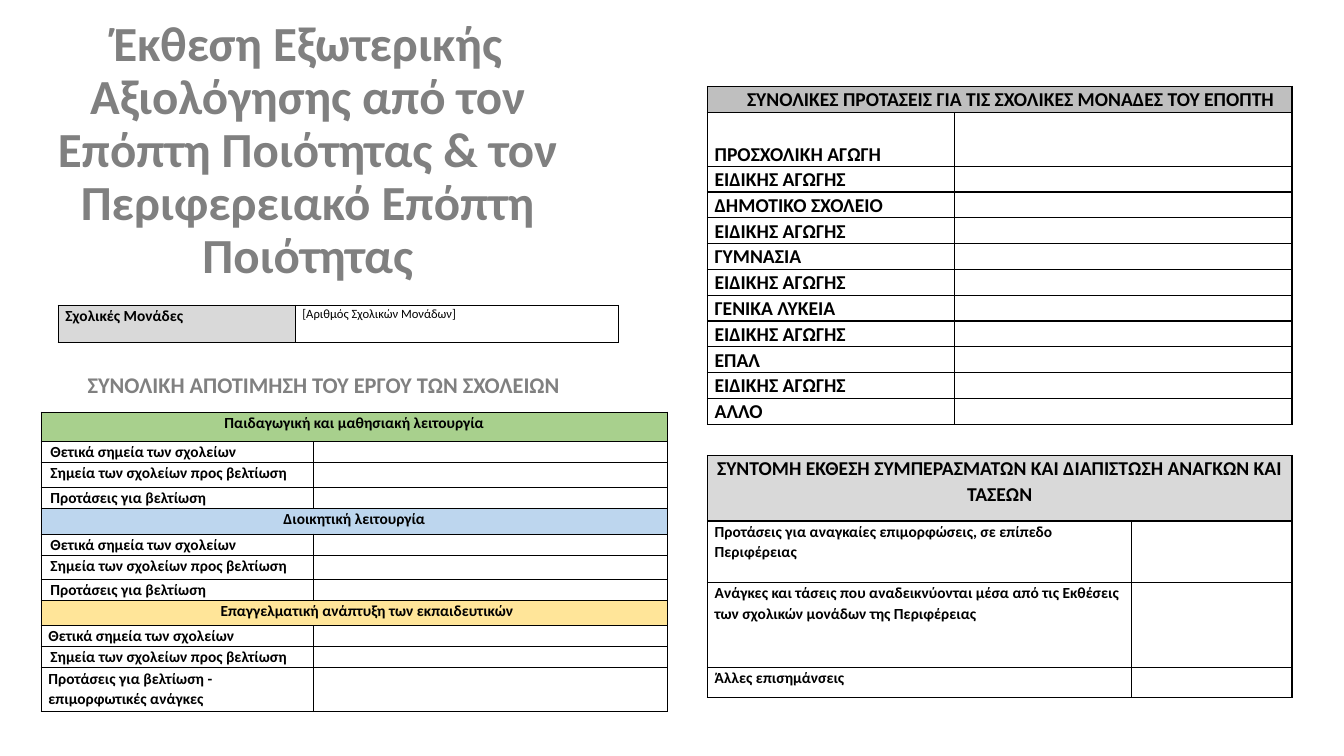
import pptx
import pptx.util
import pptx.dml.color
import pptx.enum.text
import pptx.oxml
import lxml.etree
from dataclasses import dataclass
from pptx.util import Cm


@dataclass(frozen=True)
class Theme:
    font: str = "Calibri"
    ink: str = "000000"
    heading: str = "808080"
    white: str = "FFFFFF"
    pale: str = "D9D9D9"
    grey: str = "BFBFBF"
    green: str = "A8D08D"
    blue: str = "BDD6EE"
    yellow: str = "FFE599"
    title: float = 35
    subtitle: float = 16
    large: float = 14
    body: float = 11
    small: float = 9


theme = Theme()
CENTER = pptx.enum.text.PP_ALIGN.CENTER
MIDDLE = pptx.enum.text.MSO_ANCHOR.MIDDLE
BOTTOM = pptx.enum.text.MSO_ANCHOR.BOTTOM
DRAWING = "http://schemas.openxmlformats.org/drawingml/2006/main"


def write(para, text, size, color=theme.ink, bold=True, spacing=1.07):
    para.text = text
    para.line_spacing = spacing
    para.font.name = theme.font
    para.font.size = pptx.util.Pt(size)
    para.font.bold = bold
    para.font.color.rgb = pptx.dml.color.RGBColor.from_string(color)


def add_grid(page, left, top, widths, rows):
    frame = page.shapes.add_table(len(rows), len(widths), Cm(left), Cm(top),
                                  Cm(sum(widths)), Cm(sum(row[0] for row in rows)))
    table = frame.table
    table.first_row = table.horz_banding = False
    for column, width in zip(table.columns, widths):
        column.width = Cm(width)
    for index, (height, label, size, fill, indent) in enumerate(rows):
        table.rows[index].height = Cm(height)
        for cell in table.rows[index].cells:
            cell.margin_left = cell.margin_right = Cm(0.18)
            cell.margin_top = cell.margin_bottom = 0
            cell.fill.solid()
            cell.fill.fore_color.rgb = pptx.dml.color.RGBColor.from_string(fill or theme.white)
            properties = cell._tc.get_or_add_tcPr()
            for place, side in enumerate(("lnL", "lnR", "lnT", "lnB")):
                properties.insert(place, pptx.oxml.parse_xml(
                    f'<a:{side} xmlns:a="{DRAWING}" w="12700"><a:solidFill>'
                    f'<a:srgbClr val="{theme.ink}"/></a:solidFill></a:{side}>'))
            ending = lxml.etree.SubElement(cell.text_frame.paragraphs[0]._p, f"{{{DRAWING}}}endParaRPr")
            ending.set("sz", str(theme.small * 100))
        first = table.cell(index, 0)
        first.margin_left = Cm(0.18 + indent)
        para = first.text_frame.paragraphs[0]
        write(para, label, size)
        if fill and len(rows) > 1:
            first.merge(table.cell(index, len(widths) - 1))
            para.alignment = CENTER
    return table


deck = pptx.Presentation()
deck.slide_width, deck.slide_height = Cm(33.87), Cm(19.05)
page = deck.slides.add_slide(deck.slide_layouts[6])

headings = [
    (1.04, 0.86, 13.44, 5.92, theme.title, 0.9, CENTER,
     "Έκθεση Εξωτερικής Αξιολόγησης από τον Επόπτη Ποιότητας & τον Περιφερειακό Επόπτη Ποιότητας"),
    (1.96, 9.22, 13.16, 0.94, theme.subtitle, 1.0, None,
     "ΣΥΝΟΛΙΚΗ ΑΠΟΤΙΜΗΣΗ ΤΟΥ ΕΡΓΟΥ ΤΩΝ ΣΧΟΛΕΙΩΝ"),
]
for left, top, width, height, size, spacing, align, text in headings:
    box = page.shapes.add_textbox(Cm(left), Cm(top), Cm(width), Cm(height))
    box.text_frame.word_wrap = True
    box.text_frame.vertical_anchor = MIDDLE
    para = box.text_frame.paragraphs[0]
    write(para, text, size, theme.heading, spacing=spacing)
    para.alignment = align

units = add_grid(page, 1.47, 7.7, (5.97, 8.15),
                 [(0.94, "Σχολικές Μονάδες", theme.body, theme.pale, 0)])
count = units.cell(0, 1)
count.fill.fore_color.rgb = pptx.dml.color.RGBColor.from_string(theme.white)
write(count.text_frame.paragraphs[0], "[Αριθμός Σχολικών Μονάδων]", theme.small, bold=False)

labels = ("Θετικά σημεία των σχολείων", "Σημεία των σχολείων προς βελτίωση", "Προτάσεις για βελτίωση")
sections = [
    ("Παιδαγωγική και μαθησιακή λειτουργία", theme.green, 0, labels,
     (0.74, 0.53, 0.63, 0.53), (0.05, 0.05, 0.05)),
    ("Διοικητική λειτουργία", theme.blue, 0, labels,
     (0.64, 0.53, 0.61, 0.53), (0.05, 0.05, 0.05)),
    ("Επαγγελματική ανάπτυξη των εκπαιδευτικών", theme.yellow, 0.64,
     labels[:2] + ("Προτάσεις για βελτίωση - επιμορφωτικές ανάγκες",),
     (0.64, 0.53, 0.53, 1.09), (0, 0.05, 0)),
]
assessment = []
for heading, fill, shift, items, heights, indents in sections:
    assessment.append((heights[0], heading, theme.body, fill, shift))
    for height, item, indent in zip(heights[1:], items, indents):
        assessment.append((height, item, theme.body, None, indent))
add_grid(page, 1.04, 10.39, (6.86, 8.92), assessment)

proposals = [(0.66, "ΣΥΝΟΛΙΚΕΣ ΠΡΟΤΑΣΕΙΣ ΓΙΑ ΤΙΣ ΣΧΟΛΙΚΕΣ ΜΟΝΑΔΕΣ ΤΟΥ ΕΠΟΠΤΗ", theme.large, theme.grey, 0.56)]
special = "ΕΙΔΙΚΗΣ ΑΓΩΓΗΣ"
for school in ("ΠΡΟΣΧΟΛΙΚΗ ΑΓΩΓΗ", "ΔΗΜΟΤΙΚΟ ΣΧΟΛΕΙΟ", "ΓΥΜΝΑΣΙΑ", "ΓΕΝΙΚΑ ΛΥΚΕΙΑ", "ΕΠΑΛ"):
    height = 1.35 if len(proposals) == 1 else 0.65
    proposals.append((height, school, theme.large, None, 0))
    proposals.append((0.65, special, theme.large, None, 0))
proposals.append((0.65, "ΑΛΛΟ", theme.large, None, 0))
schools = add_grid(page, 17.83, 2.18, (6.22, 8.51), proposals)
schools.cell(1, 0).vertical_anchor = BOTTOM

add_grid(page, 17.83, 11.48, (10.69, 4.04), [
    (1.65, "ΣΥΝΤΟΜΗ ΕΚΘΕΣΗ ΣΥΜΠΕΡΑΣΜΑΤΩΝ ΚΑΙ ΔΙΑΠΙΣΤΩΣΗ ΑΝΑΓΚΩΝ ΚΑΙ ΤΑΣΕΩΝ", theme.large, theme.pale, 0),
    (1.55, "Προτάσεις για αναγκαίες επιμορφώσεις, σε επίπεδο Περιφέρειας", theme.body, None, 0),
    (2.13, "Ανάγκες και τάσεις που αναδεικνύονται μέσα από τις Εκθέσεις των σχολικών μονάδων της Περιφέρειας",
     theme.body, None, 0),
    (0.76, "Άλλες επισημάνσεις", theme.body, None, 0),
])

deck.save("out.pptx")
